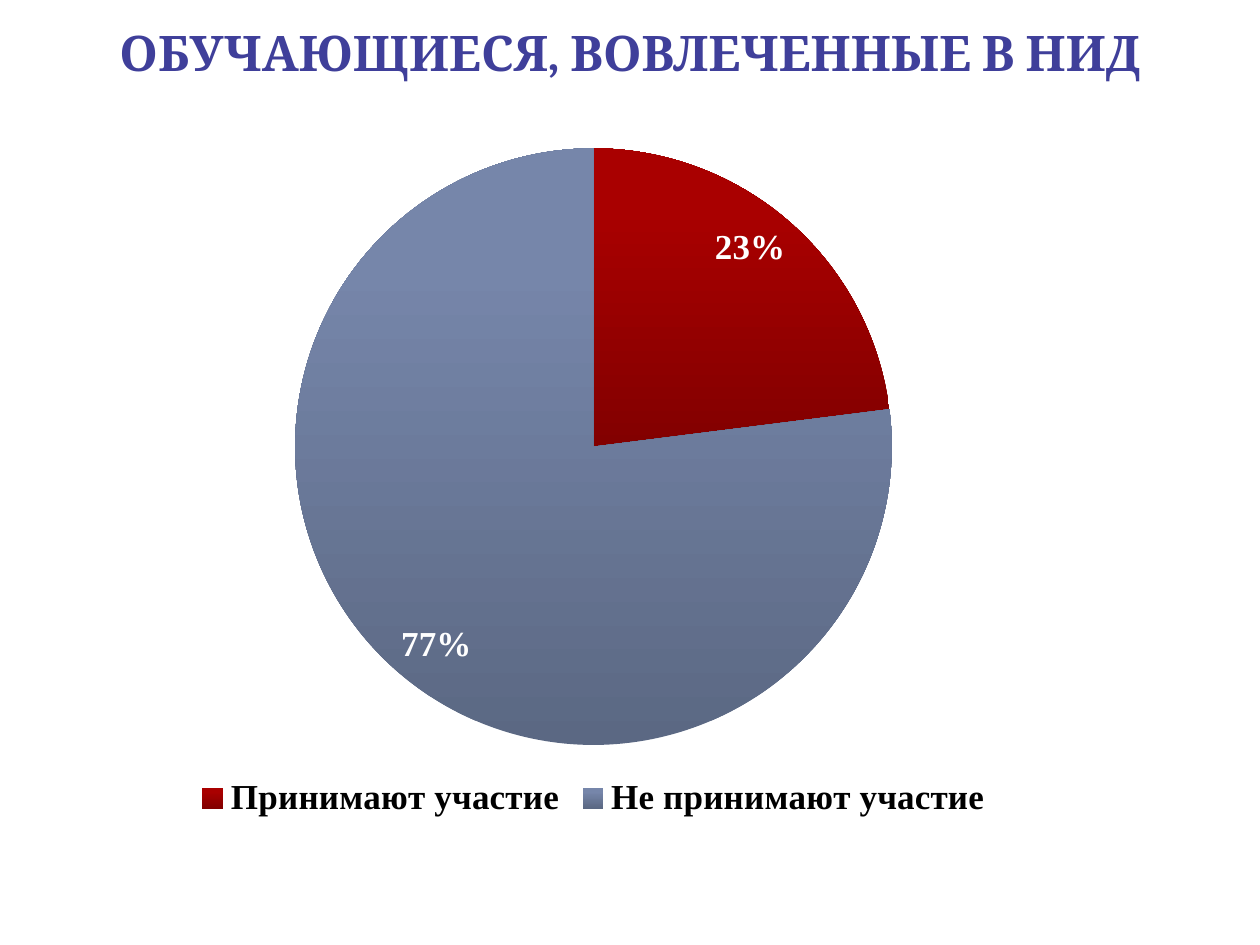
from copy import deepcopy

from pptx import Presentation
from pptx import util as u
from pptx.chart.data import CategoryChartData
from pptx.dml.color import RGBColor
from pptx.enum import chart as charts, text
from pptx.oxml.ns import qn

EMU_PER_PX = u.Inches(1) // 126


def px(*lengths):
    return [u.Emu(length * EMU_PER_PX) for length in lengths]


def color(hex_string):
    return RGBColor.from_string(hex_string)


class SlideBuilder:
    title_font = "Cambria"
    chart_font = "Times New Roman"
    title_color = "3F3F9A"

    def __init__(self, presentation):
        self.slide = presentation.slides.add_slide(presentation.slide_layouts[6])

    def style(self, font, name, size, hex_color):
        font.name, font.size, font.bold = name, u.Pt(size), True
        font.color.rgb = color(hex_color)

    def title(self, words, box):
        frame = self.slide.shapes.add_textbox(*px(*box)).text_frame
        frame.word_wrap = True
        frame.vertical_anchor = text.MSO_ANCHOR.TOP
        paragraph = frame.paragraphs[0]
        paragraph.text = words
        paragraph.alignment = text.PP_ALIGN.CENTER
        self.style(paragraph.font, self.title_font, 28, self.title_color)

    def shade(self, point, dark, light):
        """Fade from dark at the bottom to light over the top fifth."""
        fill = point.format.fill
        fill.gradient()
        fill.gradient_angle = 90
        for stop, position, hex_color in zip(fill.gradient_stops, (0, 0.8), (dark, light)):
            stop.position = position
            stop.color.rgb = color(hex_color)
        point.format.line.fill.background()

    def pie(self, shares, shades, box):
        data = CategoryChartData()
        data.categories = list(shares)
        data.add_series("Series 1", list(shares.values()))
        chart = self.slide.shapes.add_chart(
            charts.XL_CHART_TYPE.PIE, *px(*box), data).chart
        chart.has_title = False
        self.style(chart.font, self.chart_font, 20, "000000")

        chart.has_legend = True
        chart.legend.position = charts.XL_LEGEND_POSITION.BOTTOM
        chart.legend.include_in_layout = False
        self.style(chart.legend.font, self.chart_font, 20, "000000")

        plot = chart.plots[0]
        plot.vary_by_categories = True
        plot.has_data_labels = True
        labels = plot.data_labels
        labels.show_percentage, labels.show_value = True, False
        labels.number_format, labels.number_format_is_linked = "0%", False
        labels.position = charts.XL_LABEL_POSITION.INSIDE_END
        self.style(labels.font, self.chart_font, 20, "FFFFFF")

        for index, (dark, light) in enumerate(shades):
            self.shade(plot.series[0].points[index], dark, light)
        for stops in chart.element.iter(qn("a:gsLst")):
            last = deepcopy(stops[-1])
            last.set("pos", "100000")
            stops.append(last)


def main():
    presentation = Presentation()
    presentation.slide_width, presentation.slide_height = px(1260, 945)
    builder = SlideBuilder(presentation)
    builder.pie({"Принимают участие": 23, "Не принимают участие": 77},
                [("820000", "A90000"), ("5B6883", "7686AA")],
                (63, 131, 1061, 694))
    builder.title("ОБУЧАЮЩИЕСЯ, ВОВЛЕЧЕННЫЕ В НИД", (63, 16, 1134, 158))
    presentation.save("out.pptx")


if __name__ == "__main__":
    main()
